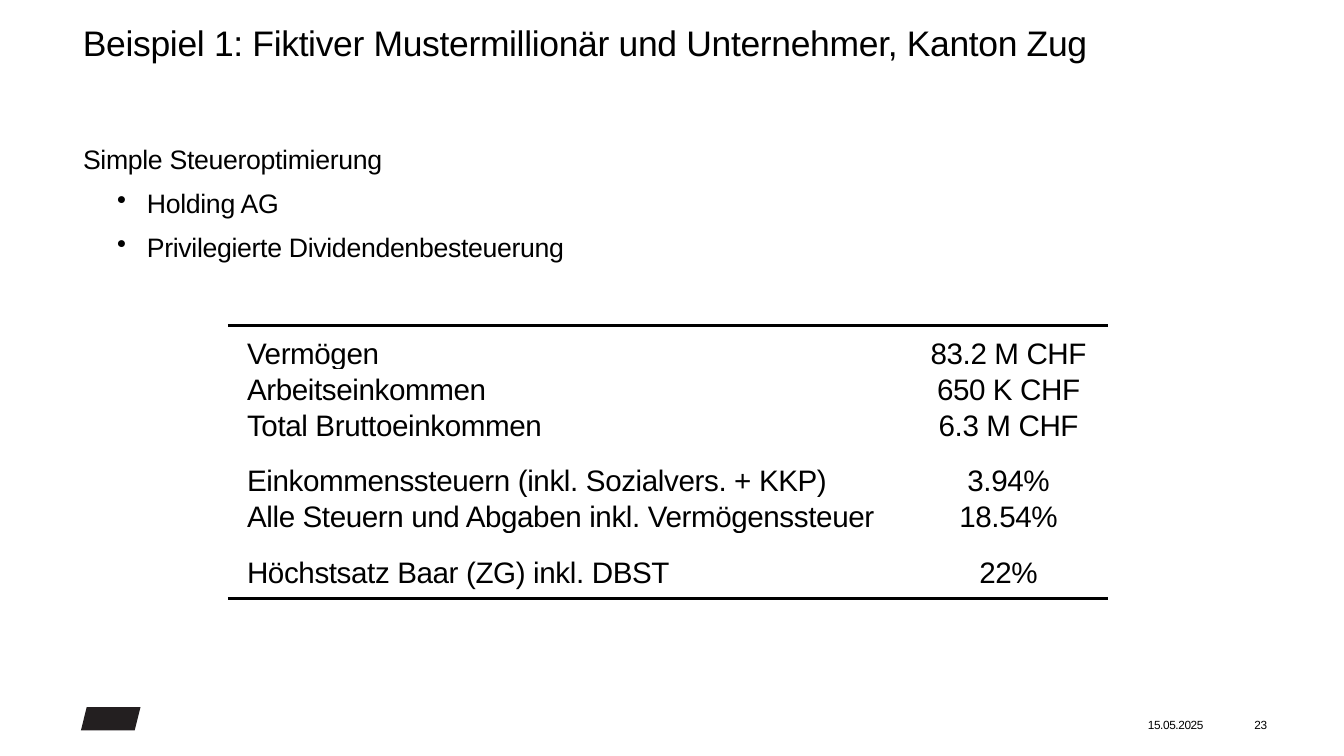
from lxml import etree
from pptx import Presentation
from pptx.dml.color import RGBColor
from pptx.enum.shapes import MSO_CONNECTOR as Connector, MSO_SHAPE as Shape
from pptx.enum.text import MSO_ANCHOR as Anchor, PP_ALIGN as Align
from pptx.oxml.ns import qn
from pptx.util import Inches, Pt

COLORS = {"text": "000000", "mark": "231F20"}
FONT = "Arial"

TABLE_LEFT, TABLE_TOP, TABLE_BOTTOM = 1.07, 1.53, 2.81
COLUMN_WIDTHS = (3.2, 0.93)
# Label, value, row height, bottom margin
TAX_ROWS = [
    ("Vermögen", "83.2 M CHF", 0.21, 0),
    ("Arbeitseinkommen", "650 K CHF", 0.17, 0),
    ("Total Bruttoeinkommen", "6.3 M CHF", 0.17, 0),
    ("Einkommenssteuern (inkl. Sozialvers. + KKP)", "3.94%", 0.26, 0),
    ("Alle Steuern und Abgaben inkl. Vermögenssteuer", "18.54%", 0.17, 0),
    ("Höchstsatz Baar (ZG) inkl. DBST", "22%", 0.3, 0.04),
]


class SlideBuilder:
    def __init__(self, slide):
        self.slide = slide

    def style(self, paragraph, size):
        for run in paragraph.runs:
            run.font.size = Pt(size)
            run.font.name = FONT
            run.font.color.rgb = RGBColor.from_string(COLORS["text"])
            run._r.get_or_add_rPr().set("spc", "-10")

    def text(self, left, top, width, height, lines, size, inset=0.01):
        """Each line is (text, space before, indent, hanging, bullet, tab)."""
        shape = self.slide.shapes.add_textbox(
            Inches(left), Inches(top), Inches(width), Inches(height))
        frame = shape.text_frame
        frame.word_wrap = True
        frame.margin_left = frame.margin_right = frame.margin_bottom = 0
        frame.margin_top = Inches(inset)
        frame.text = "\n".join(line[0] for line in lines)
        for paragraph, line in zip(frame.paragraphs, lines):
            _, before, indent, hanging, bullet, tab = line
            paragraph.space_before = Pt(before)
            properties = paragraph._p.get_or_add_pPr()
            properties.set("marL", str(Inches(indent)))
            properties.set("indent", str(Inches(-hanging)))
            if bullet:
                etree.SubElement(properties, qn("a:buChar"), char=bullet)
            if tab:
                stops = etree.SubElement(properties, qn("a:tabLst"))
                etree.SubElement(stops, qn("a:tab"), pos=str(Inches(tab)), algn="l")
            self.style(paragraph, size)

    def table(self, left, top, widths, rows, size):
        heights = [row[2] for row in rows]
        table = self.slide.shapes.add_table(
            len(rows), len(widths), Inches(left), Inches(top),
            Inches(sum(widths)), Inches(sum(heights))).table
        table.first_row = table.horz_banding = False
        for column, width in zip(table.columns, widths):
            column.width = Inches(width)
        for index, (label, value, height, bottom) in enumerate(rows):
            table.rows[index].height = Inches(height)
            cells = table.rows[index].cells
            for cell, text, align, margin in zip(
                    cells, (label, value), (Align.LEFT, Align.CENTER), (0.09, 0)):
                cell.fill.background()
                cell.vertical_anchor = Anchor.BOTTOM
                cell.margin_left = Inches(margin)
                cell.margin_right = cell.margin_top = 0
                cell.margin_bottom = Inches(bottom)
                cell.text_frame.text = text
                paragraph = cell.text_frame.paragraphs[0]
                paragraph.alignment = align
                self.style(paragraph, size)

    def rule(self, left, top, width):
        line = self.slide.shapes.add_connector(
            Connector.STRAIGHT, Inches(left), Inches(top),
            Inches(left + width), Inches(top))
        line.line.color.rgb = RGBColor.from_string(COLORS["text"])
        line.line.width = Pt(0.97)
        etree.SubElement(line._element.spPr, qn("a:effectLst"))

    def mark(self, left, top, width, height):
        shape = self.slide.shapes.add_shape(
            Shape.PARALLELOGRAM, Inches(left), Inches(top),
            Inches(width), Inches(height))
        shape.shadow.inherit = False
        shape.fill.solid()
        shape.fill.fore_color.rgb = RGBColor.from_string(COLORS["mark"])
        shape.line.fill.background()


def main():
    presentation = Presentation()
    presentation.slide_width = Inches(6.31)
    presentation.slide_height = Inches(3.55)
    builder = SlideBuilder(
        presentation.slides.add_slide(presentation.slide_layouts[6]))

    # Title
    builder.text(0.38, 0.09, 4.9, 0.23, [
        ("Beispiel 1: Fiktiver Mustermillionär und Unternehmer, Kanton Zug",
         0.9, 0.01, 0, None, None)], 12)

    # Tax optimisation bullets
    builder.text(0.35, 0.6, 2.6, 0.65, [
        ("Simple Steueroptimierung", 5.2, 0.04, 0, None, None),
        ("Holding AG", 4.1, 0.34, 0.14, "•", None),
        ("Privilegierte Dividendenbesteuerung", 4.1, 0.34, 0.14, "•", None),
    ], 9, inset=0.07)

    # Tax table between two rules
    builder.table(TABLE_LEFT, TABLE_TOP, COLUMN_WIDTHS, TAX_ROWS, 10)
    for top in (TABLE_TOP, TABLE_BOTTOM):
        builder.rule(TABLE_LEFT, top, sum(COLUMN_WIDTHS))

    # Footer
    builder.mark(0.38, 3.32, 0.28, 0.11)
    builder.text(5.38, 3.36, 0.6, 0.09, [
        ("15.05.2025\t23", 0.9, 0.01, 0, None, 0.45)], 4)

    presentation.save("out.pptx")


if __name__ == "__main__":
    main()
